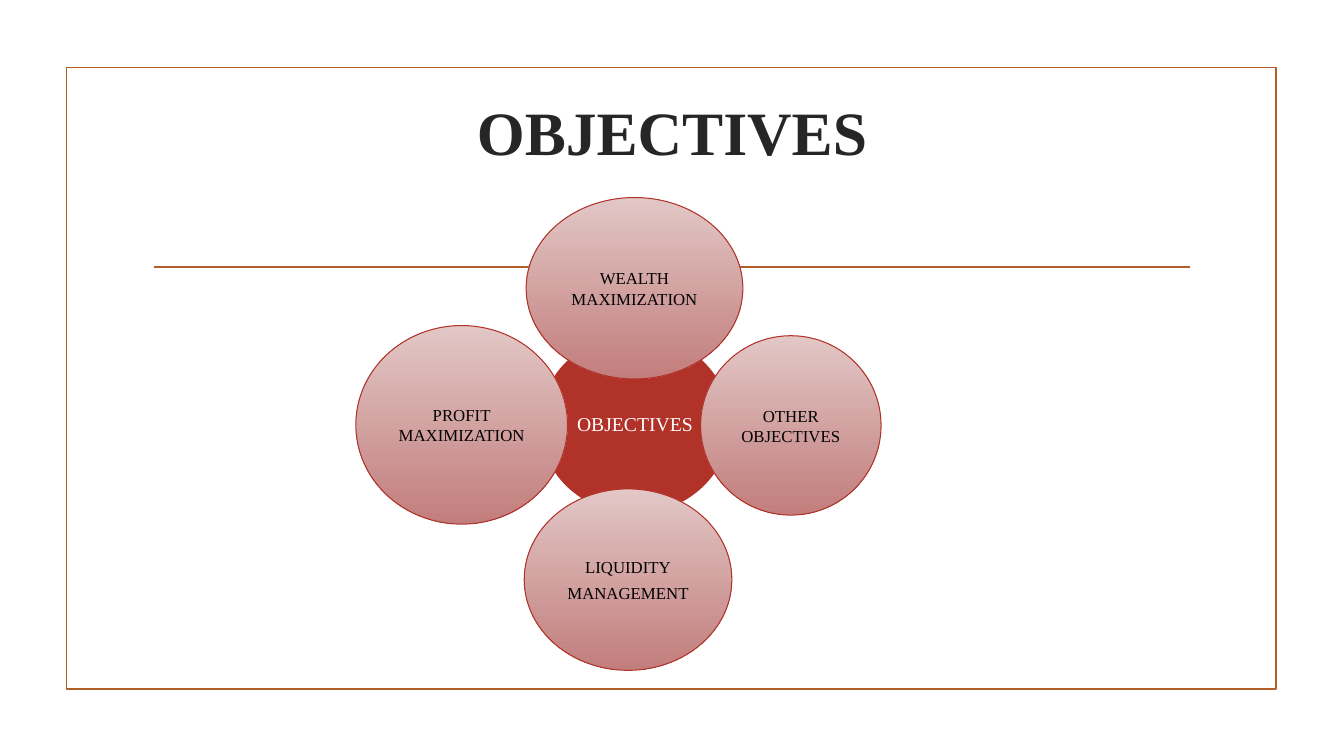
from dataclasses import dataclass

from lxml import etree
from pptx import Presentation
from pptx import util as u
from pptx.dml.color import RGBColor
from pptx.enum import shapes, text
from pptx.oxml.ns import qn


@dataclass(frozen=True)
class Theme:
    """Colours, font and type sizes of the slide."""
    font: str = "Times New Roman"
    paper: str = "FFFFFF"
    ink: str = "000000"
    heading: str = "262626"
    frame: str = "B15E28"
    accent: str = "B13228"
    petal_top: str = "E2C7C6"
    petal_bottom: str = "C27E7C"
    title_size: int = 44
    hub_size: int = 14
    petal_size: int = 12


class Canvas:
    """Draws themed elements on a grid of 100 columns by 100 rows."""

    def __init__(self, deck, theme):
        self.theme = theme
        self.column = deck.slide_width / 100
        self.row = deck.slide_height / 100
        self.slide = deck.slides.add_slide(deck.slide_layouts[5])

    def place(self, left, top, width, height):
        """Turn grid units into slide lengths."""
        return (int(left * self.column), int(top * self.row),
                int(width * self.column), int(height * self.row))

    def outline(self, element, colour, weight):
        """Give an element a solid line."""
        element.line.color.rgb = RGBColor.from_string(colour)
        element.line.width = u.Pt(weight)

    def label(self, frame, lines, size, colour, bold=False, gap=0):
        """Fill a text frame with centred lines."""
        frame.text = "\n".join(lines)
        frame.word_wrap = True
        frame.auto_size = text.MSO_AUTO_SIZE.NONE
        frame.vertical_anchor = text.MSO_ANCHOR.MIDDLE
        for index, paragraph in enumerate(frame.paragraphs):
            paragraph.alignment = text.PP_ALIGN.CENTER
            paragraph.space_before = u.Pt(gap if index else 0)
            for run in paragraph.runs:
                run.font.name = self.theme.font
                run.font.size = u.Pt(size)
                run.font.bold = bold
                run.font.color.rgb = RGBColor.from_string(colour)

    def title(self, words, *box):
        """Place and format the title placeholder."""
        heading = self.slide.shapes.title
        heading.left, heading.top, heading.width, heading.height = self.place(*box)
        self.label(heading.text_frame, [words], self.theme.title_size,
                   self.theme.heading, bold=True)

    def border(self, *box):
        """Draw the open frame around the content."""
        frame = self.slide.shapes.add_shape(
            shapes.MSO_SHAPE.RECTANGLE, *self.place(*box))
        frame.shadow.inherit = False
        frame.fill.background()
        self.outline(frame, self.theme.frame, 1.25)

    def rule(self, start, end, row, weight):
        """Draw a horizontal line between two columns."""
        left, top, right, bottom = self.place(start, row, end, row)
        line = self.slide.shapes.add_connector(
            shapes.MSO_CONNECTOR.STRAIGHT, left, top, right, bottom)
        self.outline(line, self.theme.frame, weight)
        etree.SubElement(line._element.spPr, qn("a:effectLst"))

    def circle(self, x, y, width, height):
        """Add an ellipse centred on a grid point."""
        ellipse = self.slide.shapes.add_shape(
            shapes.MSO_SHAPE.OVAL,
            *self.place(x - width / 2, y - height / 2, width, height))
        ellipse.shadow.inherit = False
        frame = ellipse.text_frame
        frame.margin_left = frame.margin_right = 0
        frame.margin_top = frame.margin_bottom = 0
        return ellipse

    def hub(self, words, *spot):
        """Draw the solid central ellipse."""
        centre = self.circle(*spot)
        centre.fill.solid()
        centre.fill.fore_color.rgb = RGBColor.from_string(self.theme.accent)
        self.outline(centre, self.theme.paper, 2)
        self.label(centre.text_frame, [words], self.theme.hub_size, self.theme.paper)

    def petal(self, lines, *spot, gap=0):
        """Draw a shaded ellipse for one objective."""
        objective = self.circle(*spot)
        objective.fill.gradient()
        objective.fill.gradient_angle = 270
        shades = self.theme.petal_top, self.theme.petal_bottom
        for stop, shade in zip(objective.fill.gradient_stops, shades):
            stop.color.rgb = RGBColor.from_string(shade)
        self.outline(objective, self.theme.accent, 0.75)
        self.label(objective.text_frame, lines, self.theme.petal_size,
                   self.theme.ink, gap=gap)


def main():
    """Build the objectives slide."""
    deck = Presentation()
    deck.slide_width, deck.slide_height = u.Inches(13.33), u.Inches(7.5)
    canvas = Canvas(deck, Theme())
    canvas.border(4.95, 8.93, 90, 82.27)
    canvas.rule(11.48, 88.58, 35.33, 1.25)
    canvas.title("OBJECTIVES", 10.65, 7.73, 78.75, 19.07)
    canvas.hub("OBJECTIVES", 47.25, 56.07, 14.4, 24.13)
    canvas.petal(["OTHER", "OBJECTIVES"], 58.84, 56.27, 13.43, 23.73)
    canvas.petal(["PROFIT", "MAXIMIZATION"], 34.35, 56.2, 15.75, 26.27)
    canvas.rule(17.7, 29.55, 35.33, 0.75)
    canvas.petal(["WEALTH", "MAXIMIZATION"], 47.21, 38.13, 16.13, 24)
    canvas.petal(["LIQUIDITY", "MANAGEMENT"], 46.73, 76.67, 15.45, 24, gap=4.5)
    deck.save("out.pptx")


if __name__ == "__main__":
    main()
